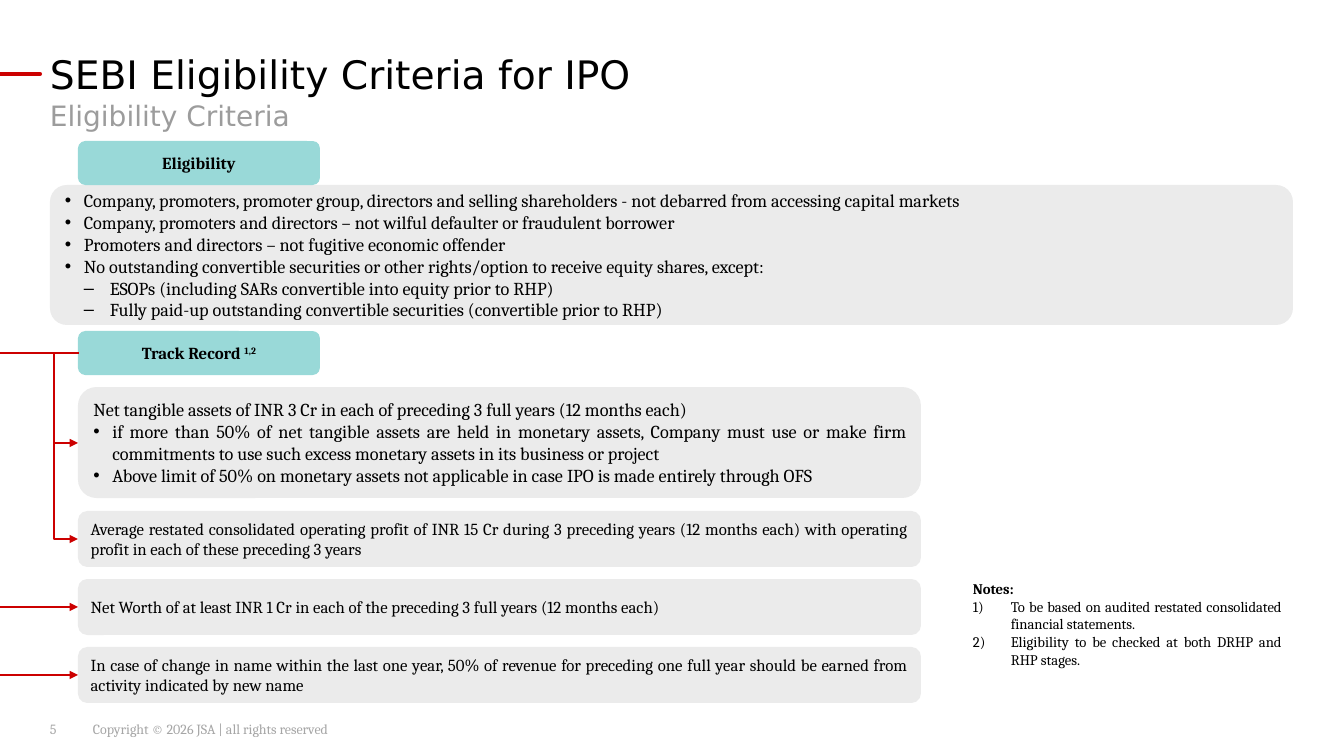
from lxml import etree
from pptx import Presentation
from pptx.dml.color import RGBColor
from pptx.enum.shapes import MSO_CONNECTOR, MSO_SHAPE
from pptx.enum.text import MSO_ANCHOR, PP_ALIGN
from pptx.oxml.ns import qn
from pptx.util import Pt

PX = 914400 / 100.8
STRAIGHT, ELBOW = MSO_CONNECTOR.STRAIGHT, MSO_CONNECTOR.ELBOW
ROUNDED = MSO_SHAPE.ROUNDED_RECTANGLE
TOP, MIDDLE = MSO_ANCHOR.TOP, MSO_ANCHOR.MIDDLE
LEFT, CENTER, JUSTIFY = PP_ALIGN.LEFT, PP_ALIGN.CENTER, PP_ALIGN.JUSTIFY
BLACK = RGBColor(0x00, 0x00, 0x00)
RED = RGBColor(0xCC, 0x00, 0x00)
TEAL = RGBColor(0x99, 0xD9, 0xD8)
PANEL = RGBColor(0xEB, 0xEB, 0xEB)
SUBTITLE_GREY = RGBColor(0x9C, 0x9C, 0x9C)
FOOTER_GREY = RGBColor(0xA6, 0xA6, 0xA6)
# Bullet: character, left indent and hanging indent in px
DOT = ("•", 19, 19)
DASH = ("‒", 45, 26)
NUMBER = (None, 38, 38)

presentation = Presentation()
presentation.slide_width = round(1344 * PX)
presentation.slide_height = round(756 * PX)
slide = presentation.slides.add_slide(presentation.slide_layouts[6])


def add_text(lines, box, size, fill=None, corner=None, font="Cambria", color=BLACK,
             bold=False, align=LEFT, anchor=MIDDLE, inset=True):
    """Add a box of (text, bullet) lines: a rounded panel if fill is given, else a text box."""
    place = [round(value * PX) for value in box]
    if fill is None:
        shape = slide.shapes.add_textbox(*place)
    else:
        shape = slide.shapes.add_shape(ROUNDED, *place)
        shape.shadow.inherit = False
        shape.fill.solid()
        shape.fill.fore_color.rgb = fill
        shape.line.fill.background()
        if corner is not None:
            shape.adjustments[0] = corner
    frame = shape.text_frame
    frame.word_wrap = True
    frame.vertical_anchor = anchor
    if not inset:
        frame.margin_left = frame.margin_right = frame.margin_top = frame.margin_bottom = 0
    for index, (text, bullet) in enumerate(lines):
        paragraph = frame.add_paragraph() if index else frame.paragraphs[0]
        paragraph.alignment = align
        if bullet:
            character, indent, hanging = bullet
            properties = paragraph._p.get_or_add_pPr()
            properties.set("marL", str(round(indent * PX)))
            properties.set("indent", str(round(-hanging * PX)))
            if character:
                etree.SubElement(properties, qn("a:buFont"), typeface="Arial")
                etree.SubElement(properties, qn("a:buChar"), char=character)
            else:
                etree.SubElement(properties, qn("a:buFont"), typeface="+mj-lt")
                etree.SubElement(properties, qn("a:buAutoNum"), type="arabicParenR")
            if bullet == DASH:
                paragraph.level = 1
                paragraph.alignment = LEFT
        run = paragraph.add_run()
        run.text = text
        run.font.name = font
        run.font.size = Pt(size)
        run.font.bold = bold
        run.font.color.rgb = color
    return shape


def add_line(kind, x1, y1, x2, y2, width):
    line = slide.shapes.add_connector(kind, *[round(v * PX) for v in (x1, y1, x2, y2)])
    line.line.color.rgb = RED
    line.line.width = Pt(width)
    etree.SubElement(line._element.spPr, qn("a:effectLst"))
    return line


# Footer, title and subtitle
add_text([("Copyright © 2026 JSA | all rights reserved", None)], (93, 720, 588, 17), 10,
         color=FOOTER_GREY, inset=False)
add_text([("5", None)], (50, 720, 40, 17), 10, color=FOOTER_GREY, inset=False)
title_rule = add_line(STRAIGHT, 0, 74, 40, 74, 3)
title_rule.line._get_or_add_ln().set("cap", "rnd")
add_text([("SEBI Eligibility Criteria for IPO", None)], (50, 50, 1243, 47), 28,
         font="DejaVu Sans", anchor=TOP, inset=False)
add_text([("Eligibility Criteria", None)], (50, 98, 1243, 89), 20,
         font="DejaVu Sans", color=SUBTITLE_GREY, anchor=TOP, inset=False)

# Track record heading and its criteria
track_record = add_text([("Track Record ", None)], (78, 331, 242, 44), 12, fill=TEAL,
                        bold=True, align=CENTER)
note_marks = track_record.text_frame.paragraphs[0].add_run()
note_marks.text = "1,2"
note_marks.font.name = "Cambria"
note_marks.font.size = Pt(12)
note_marks.font.bold = True
note_marks.font.color.rgb = BLACK
note_marks.font._element.set("baseline", "30000")

add_text([
    ("Net tangible assets of INR 3 Cr in each of preceding 3 full years (12 months each)", None),
    ("if more than 50% of net tangible assets are held in monetary assets, Company must use or "
     "make firm commitments to use such excess monetary assets in its business or project", DOT),
    ("Above limit of 50% on monetary assets not applicable in case IPO is made entirely "
     "through OFS", DOT),
], (78, 387, 843, 111), 13, fill=PANEL, align=JUSTIFY)

criteria = [
    "Average restated consolidated operating profit of INR 15 Cr during 3 preceding years "
    "(12 months each) with operating profit in each of these preceding 3 years",
    "Net Worth of at least INR 1 Cr in each of the preceding 3 full years (12 months each)",
    "In case of change in name within the last one year, 50% of revenue for preceding one full "
    "year should be earned from activity indicated by new name",
]
for row, criterion in enumerate(criteria):
    add_text([(criterion, None)], (78, 511 + 68 * row, 843, 56), 12, fill=PANEL, align=JUSTIFY)

# Elbow arrows from the heading to each criterion, bending this many px to its left
for reach, y in ((25, 443), (25, 539), (82, 607), (82, 675)):
    arrow = add_line(ELBOW, 79, 353, 78, y, 1)
    etree.SubElement(arrow.line._get_or_add_ln(), qn("a:tailEnd"), type="triangle")
    guides = arrow._element.spPr.find(qn("a:prstGeom")).get_or_add_avLst()
    etree.SubElement(guides, qn("a:gd"), name="adj1", fmla=f"val {reach * 100000}")

# Eligibility panel, notes and eligibility heading
add_text([
    ("Company, promoters, promoter group, directors and selling shareholders - not debarred "
     "from accessing capital markets", DOT),
    ("Company, promoters and directors – not wilful defaulter or fraudulent borrower", DOT),
    ("Promoters and directors – not fugitive economic offender", DOT),
    ("No outstanding convertible securities or other rights/option to receive equity shares, "
     "except:", DOT),
    ("ESOPs (including SARs convertible into equity prior to RHP)", DASH),
    ("Fully paid-up outstanding convertible securities (convertible prior to RHP)", DASH),
], (50, 185, 1243, 140), 13, fill=PANEL, corner=0.12, align=JUSTIFY)

notes = add_text([
    ("Notes:", None),
    ("To be based on audited restated consolidated financial statements.", NUMBER),
    ("Eligibility to be checked at both DRHP and RHP stages.", NUMBER),
], (963, 575, 329, 99), 10.5, align=JUSTIFY, anchor=TOP)
notes.text_frame.paragraphs[0].alignment = LEFT
notes.text_frame.paragraphs[0].runs[0].font.bold = True

add_text([("Eligibility", None)], (78, 141, 242, 44), 12, fill=TEAL, bold=True, align=CENTER)

presentation.save("out.pptx")
